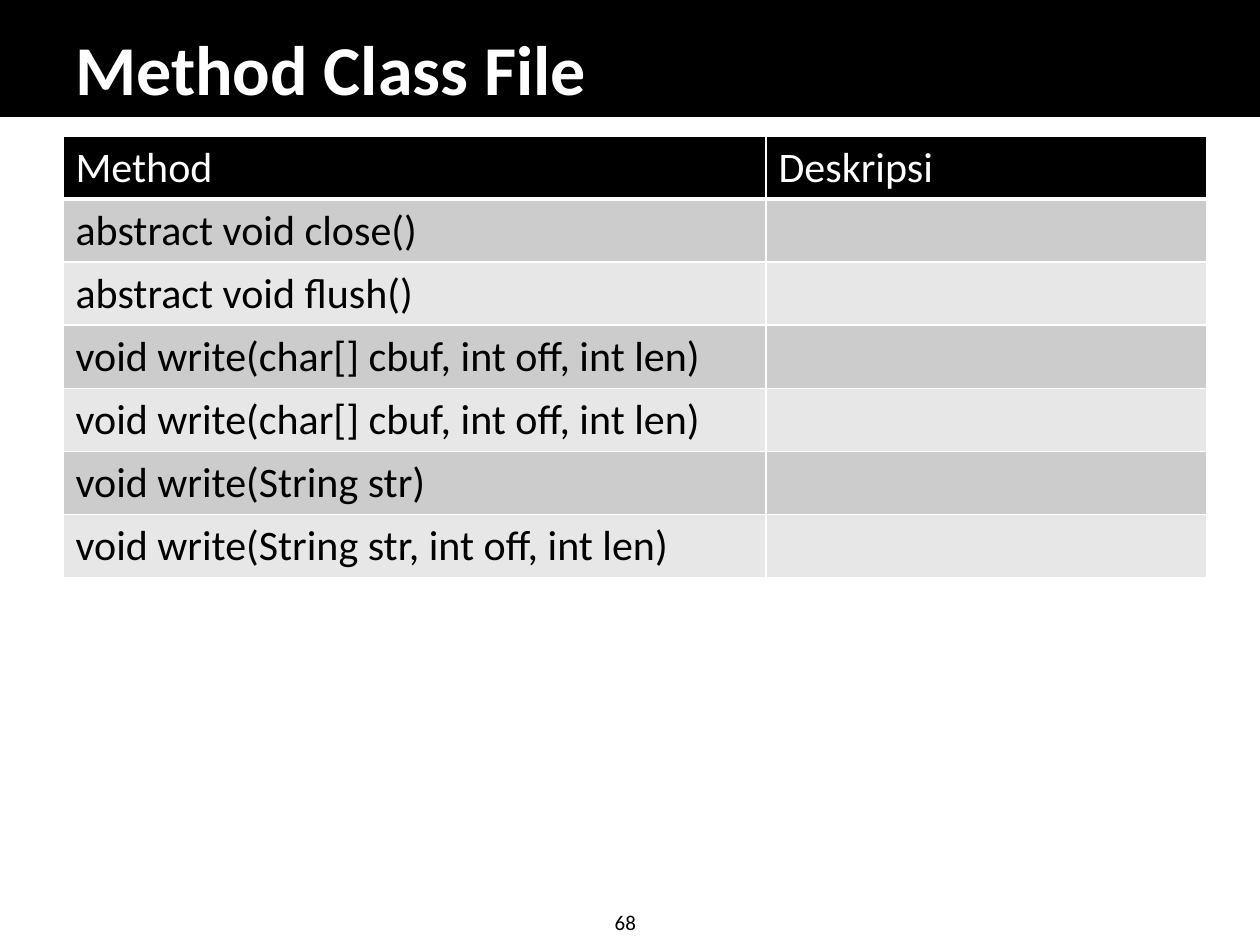
from lxml import etree
from pptx import Presentation
from pptx.dml.color import RGBColor
from pptx.enum.shapes import MSO_SHAPE
from pptx.enum.text import MSO_ANCHOR, PP_ALIGN
from pptx.oxml.ns import qn
from pptx.util import Inches, Pt

RECTANGLE = MSO_SHAPE.RECTANGLE
TOP, BOTTOM = MSO_ANCHOR.TOP, MSO_ANCHOR.BOTTOM
LEFT = PP_ALIGN.LEFT

WIDTH, HEIGHT = 10, 7.5
MARGIN = 0.05 * WIDTH
BAND_HEIGHT = 0.92
TABLE_TOP = 1.08
COLUMN_WIDTHS = (5.58, 3.5)
ROW_HEIGHT = 0.5
FONT = "Calibri"
COLORS = {
    "black": "000000",
    "white": "FFFFFF",
    "odd_row": "CCCCCC",
    "even_row": "E7E7E7",
}
HEADINGS = ("Method", "Deskripsi")
METHODS = (
    "abstract void close()",
    "abstract void flush()",
    "void write(char[] cbuf, int off, int len)",
    "void write(char[] cbuf, int off, int len)",
    "void write(String str)",
    "void write(String str, int off, int len)",
)


def rgb(name):
    return RGBColor.from_string(COLORS[name])


def write_text(frame, text, size=24, color="black", bold=False, align=LEFT):
    paragraph = frame.paragraphs[0]
    paragraph.text = text
    paragraph.alignment = align
    font = paragraph.font
    font.name, font.size, font.bold = FONT, Pt(size), bold
    font.color.rgb = rgb(color)


def add_band(slide):
    band = slide.shapes.add_shape(RECTANGLE, 0, 0, Inches(WIDTH), Inches(BAND_HEIGHT))
    band.shadow.inherit = False
    band.fill.solid()
    band.fill.fore_color.rgb = rgb("black")
    band.line.color.rgb = rgb("black")
    band.line.width = Pt(1)


def add_label(slide, text, left, top, width, height, anchor=TOP, wrap=True, **style):
    box = slide.shapes.add_textbox(*map(Inches, (left, top, width, height)))
    box.text_frame.word_wrap = wrap
    box.text_frame.vertical_anchor = anchor
    write_text(box.text_frame, text, **style)


def set_borders(cell, **widths):
    """Draw white borders; they must come before the fill in the cell's XML."""
    properties = cell._tc.get_or_add_tcPr()
    for side, width in widths.items():
        line = etree.SubElement(properties, qn(f"a:ln{side}"), w=str(Pt(width)))
        fill = etree.SubElement(line, qn("a:solidFill"))
        etree.SubElement(fill, qn("a:srgbClr"), val=COLORS["white"])


def add_method_table(slide):
    rows = [HEADINGS] + [(method, "") for method in METHODS]
    table = slide.shapes.add_table(
        len(rows), len(HEADINGS), Inches(MARGIN), Inches(TABLE_TOP),
        Inches(sum(COLUMN_WIDTHS)), Inches(ROW_HEIGHT * len(rows)),
    ).table
    for column, width in zip(table.columns, COLUMN_WIDTHS):
        column.width = Inches(width)

    for r, row in enumerate(rows):
        if r == 0:
            fill, color = "black", "white"
        else:
            fill, color = ("odd_row" if r % 2 else "even_row"), "black"
        for c, text in enumerate(row):
            cell = table.cell(r, c)
            set_borders(cell, L=1, R=1, T=3 if r == 1 else 1, B=3 if r == 0 else 1)
            cell.fill.solid()
            cell.fill.fore_color.rgb = rgb(fill)
            write_text(cell.text_frame, text, color=color)


def main():
    presentation = Presentation()
    presentation.slide_width = Inches(WIDTH)
    presentation.slide_height = Inches(HEIGHT)
    slide = presentation.slides.add_slide(presentation.slide_layouts[6])

    # Title band
    add_band(slide)
    add_label(slide, "Method Class File", MARGIN, 0.17, 9.33, 0.75,
              anchor=BOTTOM, size=40, color="white", bold=True)

    # Methods and their descriptions
    add_method_table(slide)

    # Page number
    add_label(slide, "68", 4.78, 7.17, 0.41, 0.3, wrap=False, size=12)

    presentation.save("out.pptx")


if __name__ == "__main__":
    main()
